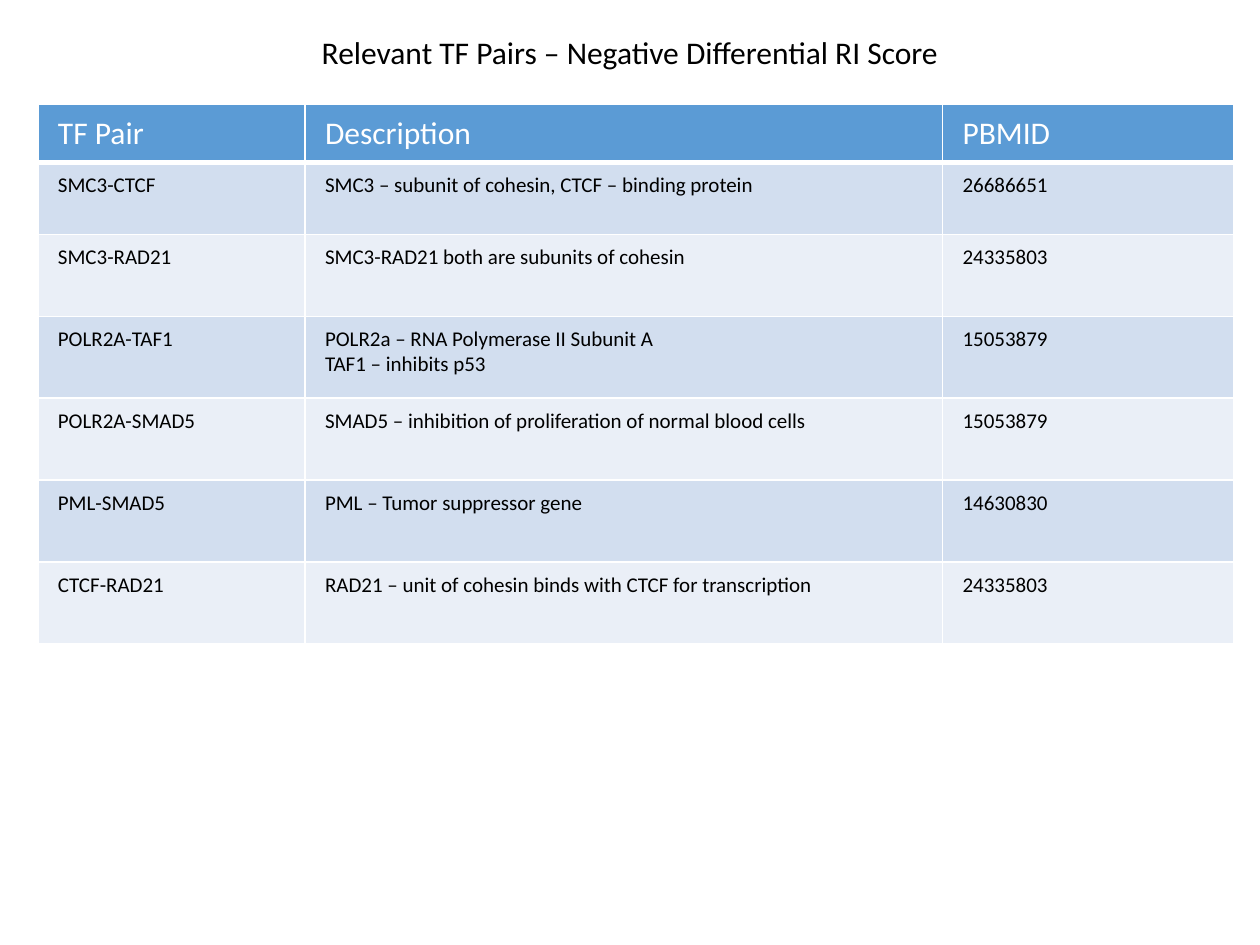
import pptx
import pptx.dml.color
import pptx.enum.text
import pptx.oxml
import pptx.oxml.ns
import pptx.util

RGBColor = pptx.dml.color.RGBColor
BLACK = RGBColor(0x00, 0x00, 0x00)
WHITE = RGBColor(0xFF, 0xFF, 0xFF)
HEADER = RGBColor(0x5B, 0x9B, 0xD5)
BANDS = (RGBColor(0xD2, 0xDE, 0xEF), RGBColor(0xEA, 0xEF, 0xF7))

TITLE = "Relevant TF Pairs – Negative Differential RI Score"
ROWS = [
    ("TF Pair", "Description", "PBMID"),
    ("SMC3-CTCF", "SMC3 – subunit of cohesin, CTCF – binding protein", "26686651"),
    ("SMC3-RAD21", "SMC3-RAD21 both are subunits of cohesin", "24335803"),
    ("POLR2A-TAF1", "POLR2a – RNA Polymerase II Subunit A\nTAF1 – inhibits p53", "15053879"),
    ("POLR2A-SMAD5", "SMAD5 – inhibition of proliferation of normal blood cells", "15053879"),
    ("PML-SMAD5", "PML – Tumor suppressor gene", "14630830"),
    ("CTCF-RAD21", "RAD21 – unit of cohesin binds with CTCF for transcription", "24335803"),
]
COL_WIDTHS = [2.12, 5.06, 2.31]
ROW_HEIGHTS = [0.46, 0.57] + [0.65] * 5


class Deck:
    font = "Calibri"
    large, small = 18, 12
    width, height = 10, 7.5

    def __init__(self):
        self.prs = pptx.Presentation()
        self.prs.slide_width = pptx.util.Inches(self.width)
        self.prs.slide_height = pptx.util.Inches(self.height)
        self.s = self.prs.slides.add_slide(self.prs.slide_layouts[5])

    def box(self, x, y, w, h):
        pw, ph = self.prs.slide_width, self.prs.slide_height
        return int(x * pw), int(y * ph), int(w * pw), int(h * ph)

    def set_text(self, tf, text, size, color, align):
        tf.text = text
        for p in tf.paragraphs:
            p.alignment = align
            for r in p.runs:
                r.font.name = self.font
                r.font.size = pptx.util.Pt(size)
                r.font.bold = False
                r.font.color.rgb = color

    def title(self, text, x, y, w, h):
        sp = self.s.shapes.title
        sp.left, sp.top, sp.width, sp.height = self.box(x, y, w, h)
        tf = sp.text_frame
        tf.word_wrap = False
        tf.auto_size = pptx.enum.text.MSO_AUTO_SIZE.NONE
        tf.vertical_anchor = pptx.enum.text.MSO_ANCHOR.MIDDLE
        self.set_text(tf, text, self.large, BLACK, pptx.enum.text.PP_ALIGN.CENTER)

    def borders(self, cell, **widths):
        tcPr = cell._tc.get_or_add_tcPr()
        for side, width in widths.items():
            tcPr.append(pptx.oxml.parse_xml(
                f'<a:ln{side} {pptx.oxml.ns.nsdecls("a")} w="{pptx.util.Pt(width)}">'
                f'<a:solidFill><a:srgbClr val="{WHITE}"/></a:solidFill></a:ln{side}>'))

    def cell(self, cell, text, row):
        header = row == 0
        cell.margin_left = cell.margin_right = pptx.util.Inches(0.16)
        cell.margin_top = cell.margin_bottom = pptx.util.Inches(0.08)
        self.borders(cell, L=1, R=1, T=3 if row == 1 else 1, B=3 if header else 1)
        cell.fill.solid()
        cell.fill.fore_color.rgb = HEADER if header else BANDS[(row - 1) % 2]
        self.set_text(cell.text_frame, text, self.large if header else self.small,
                      WHITE if header else BLACK, pptx.enum.text.PP_ALIGN.LEFT)

    def table(self, rows, x, y, col_widths, row_heights):
        frame = self.box(x, y, sum(col_widths) / self.width, sum(row_heights) / self.height)
        table = self.s.shapes.add_table(len(rows), len(col_widths), *frame).table
        table.horz_banding = False
        for col, width in zip(table.columns, col_widths):
            col.width = pptx.util.Inches(width)
        for i, (row, height) in enumerate(zip(table.rows, row_heights)):
            row.height = pptx.util.Inches(height)
            for cell, text in zip(row.cells, rows[i]):
                self.cell(cell, text, i)


def main():
    deck = Deck()
    deck.title(TITLE, 0.24, 0.03, 0.52, 0.05)
    deck.table(ROWS, 0.03, 0.11, COL_WIDTHS, ROW_HEIGHTS)
    deck.prs.save("out.pptx")


if __name__ == "__main__":
    main()
